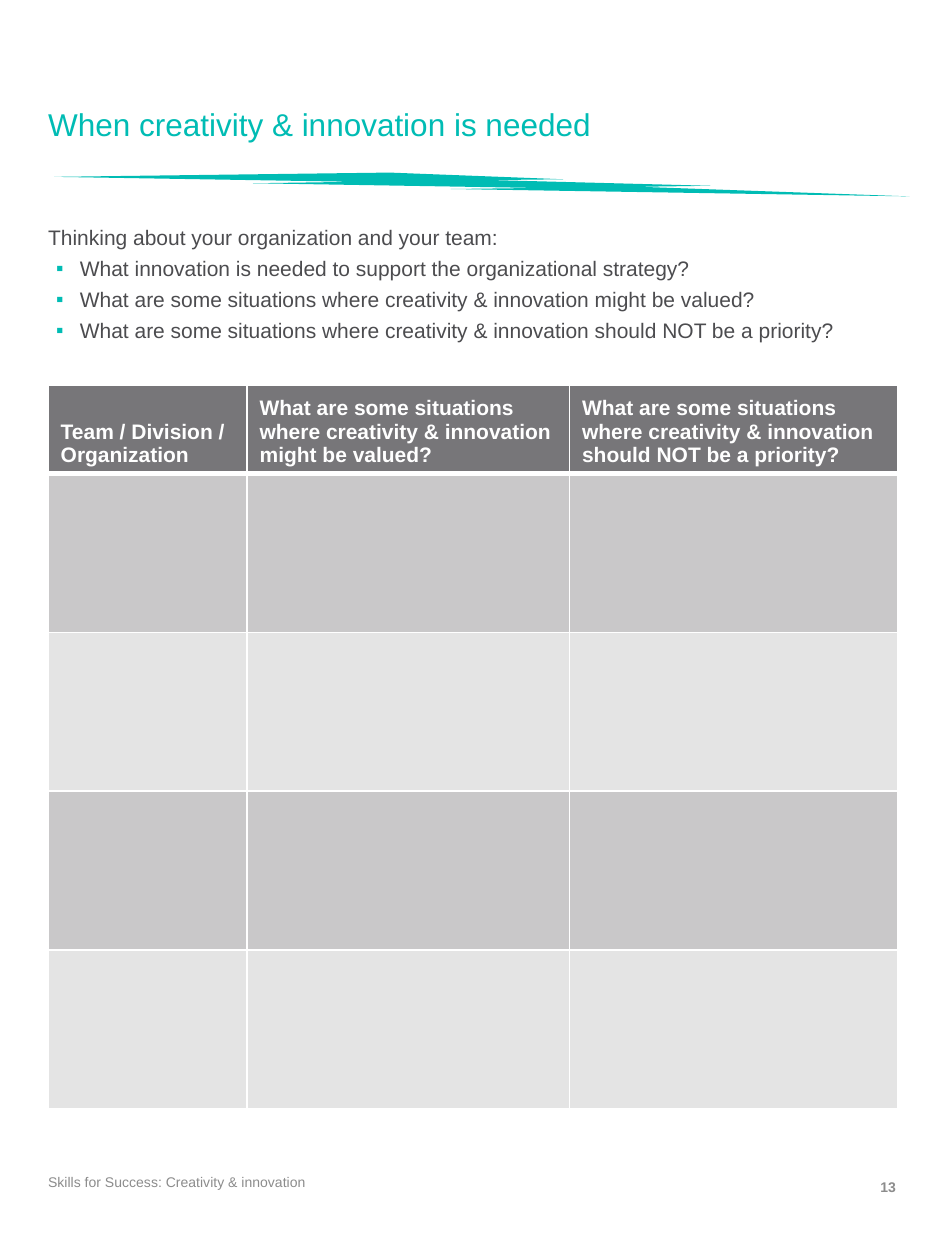
"""Build the worksheet page on when creativity and innovation is needed."""
from dataclasses import dataclass

from lxml import etree
from pptx import Presentation
from pptx import util as u
from pptx.dml.color import RGBColor
from pptx.enum import shapes, text
from pptx.oxml.ns import qn

TEAL, INK, WHITE, MUTED = "00BCB4", "4C4C4F", "FFFFFF", "8C8C8C"
HEADER, DARK_BAND, LIGHT_BAND = "777679", "C9C8C9", "E4E4E4"
LEFT, WIDTH = 0.97, 17.12


@dataclass(frozen=True)
class Box:
    left: float
    top: float
    width: float
    height: float

    def lengths(self) -> list:
        return [u.Cm(v) for v in (self.left, self.top, self.width, self.height)]


@dataclass(frozen=True)
class Style:
    size: float
    color: str
    bold: bool = False


@dataclass(frozen=True)
class Footer:
    words: str
    box: Box
    style: Style
    align: text.PP_ALIGN


BODY = Style(12, INK)
HEADING = Style(12, WHITE, True)
INTRO = "Thinking about your organization and your team:"
VALUED = "What are some situations where creativity & innovation might be valued?"
NOT_PRIORITY = "What are some situations where creativity & innovation should NOT be a priority?"
QUESTIONS = ["What innovation is needed to support the organizational strategy?", VALUED, NOT_PRIORITY]
COLUMNS = [("Team / Division / Organization", 4.01), (VALUED, 6.5), (NOT_PRIORITY, 6.61)]
BANDS = [DARK_BAND, LIGHT_BAND] * 2
HEADER_HEIGHT, BAND_HEIGHT = 1.4, 3.2
FOOTERS = [
    Footer("Skills for Success: Creativity & innovation", Box(LEFT, 23.37, 6.43, 0.91),
           Style(8, MUTED), text.PP_ALIGN.LEFT),
    Footer("13", Box(16.08, 23.55, 1.98, 0.76), Style(8, MUTED, True), text.PP_ALIGN.RIGHT),
]


def rgb(value: str) -> RGBColor:
    return RGBColor.from_string(value)


def place(part, box: Box) -> None:
    part.left, part.top, part.width, part.height = box.lengths()


def set_frame(frame, inset: float = 0) -> None:
    frame.word_wrap = True
    frame.vertical_anchor = text.MSO_ANCHOR.MIDDLE
    frame.margin_left = frame.margin_right = 0
    frame.margin_top = frame.margin_bottom = u.Cm(inset)


def add_words(paragraph, words: str, style: Style) -> None:
    run = paragraph.add_run()
    run.text = words
    run.font.name = "Arial"
    run.font.size = u.Pt(style.size)
    run.font.bold = style.bold
    run.font.color.rgb = rgb(style.color)


def set_bullet(paragraph, bullet: str = "") -> None:
    props = paragraph._p.get_or_add_pPr()
    props.set("marL", str(u.Cm(0.64) if bullet else 0))
    props.set("indent", str(u.Cm(-0.48) if bullet else 0))
    if not bullet:
        etree.SubElement(props, qn("a:buNone"))
        return
    tint = etree.SubElement(props, qn("a:buClr"))
    etree.SubElement(tint, qn("a:srgbClr")).set("val", TEAL)
    etree.SubElement(props, qn("a:buFont")).set("typeface", "Arial")
    etree.SubElement(props, qn("a:buChar")).set("char", bullet)


def set_borders(cell, top: float, bottom: float) -> None:
    props = cell._tc.get_or_add_tcPr()
    for side, points in (("L", 1), ("R", 1), ("T", top), ("B", bottom)):
        line = etree.SubElement(props, qn(f"a:ln{side}"))
        line.set("w", str(u.Pt(points)))
        fill = etree.SubElement(line, qn("a:solidFill"))
        etree.SubElement(fill, qn("a:srgbClr")).set("val", WHITE)


def add_divider(slide) -> None:
    bolt = slide.shapes.add_shape(shapes.MSO_SHAPE.LIGHTNING_BOLT, *Box(1.09, 3.48, 17.25, 0.48).lengths())
    bolt.shadow.inherit = False
    bolt.fill.solid()
    bolt.fill.fore_color.rgb = rgb(TEAL)
    bolt.line.fill.background()


def fill_title(title) -> None:
    place(title, Box(LEFT, 1.35, WIDTH, 2.39))
    set_frame(title.text_frame)
    heading = title.text_frame.paragraphs[0]
    heading.alignment = text.PP_ALIGN.LEFT
    heading.line_spacing = 0.9
    add_words(heading, "When creativity & innovation is needed", Style(18, TEAL))


def fill_questions(body) -> None:
    place(body, Box(LEFT, 4.47, WIDTH, 2.49))
    frame = body.text_frame
    set_frame(frame)
    frame.auto_size = text.MSO_AUTO_SIZE.SHAPE_TO_FIT_TEXT
    for index, words in enumerate([INTRO, *QUESTIONS]):
        paragraph = frame.add_paragraph() if index else frame.paragraphs[0]
        paragraph.level = 1 if index else 0
        set_bullet(paragraph, "▪" if index else "")
        paragraph.space_before = u.Pt(1.7 if index else 0)
        paragraph.space_after = u.Pt(1.7)
        add_words(paragraph, words, BODY)


def add_worksheet(slide) -> None:
    height = HEADER_HEIGHT + BAND_HEIGHT * len(BANDS)
    box = Box(LEFT, 7.77, WIDTH, height)
    worksheet = slide.shapes.add_table(len(BANDS) + 1, len(COLUMNS), *box.lengths()).table
    for column, (heading, width) in enumerate(COLUMNS):
        worksheet.columns[column].width = u.Cm(width)
        header = worksheet.cell(0, column)
        header.vertical_anchor = text.MSO_ANCHOR.BOTTOM
        add_words(header.text_frame.paragraphs[0], heading, HEADING)
    for row, color in enumerate([HEADER, *BANDS]):
        worksheet.rows[row].height = u.Cm(BAND_HEIGHT if row else HEADER_HEIGHT)
        for cell in worksheet.rows[row].cells:
            set_borders(cell, top=3 if row == 1 else 1, bottom=1 if row else 3)
            cell.fill.solid()
            cell.fill.fore_color.rgb = rgb(color)


def add_footer(slide, footer: Footer) -> None:
    frame = slide.shapes.add_textbox(*footer.box.lengths()).text_frame
    set_frame(frame, 0.13)
    frame.paragraphs[0].alignment = footer.align
    add_words(frame.paragraphs[0], footer.words, footer.style)


def main() -> None:
    deck = Presentation()
    deck.slide_width, deck.slide_height = u.Cm(19.05), u.Cm(25.4)
    slide = deck.slides.add_slide(deck.slide_layouts[1])
    add_divider(slide)
    fill_title(slide.shapes.title)
    fill_questions(slide.placeholders[1])
    add_worksheet(slide)
    for footer in FOOTERS:
        add_footer(slide, footer)
    deck.save("out.pptx")


if __name__ == "__main__":
    main()
